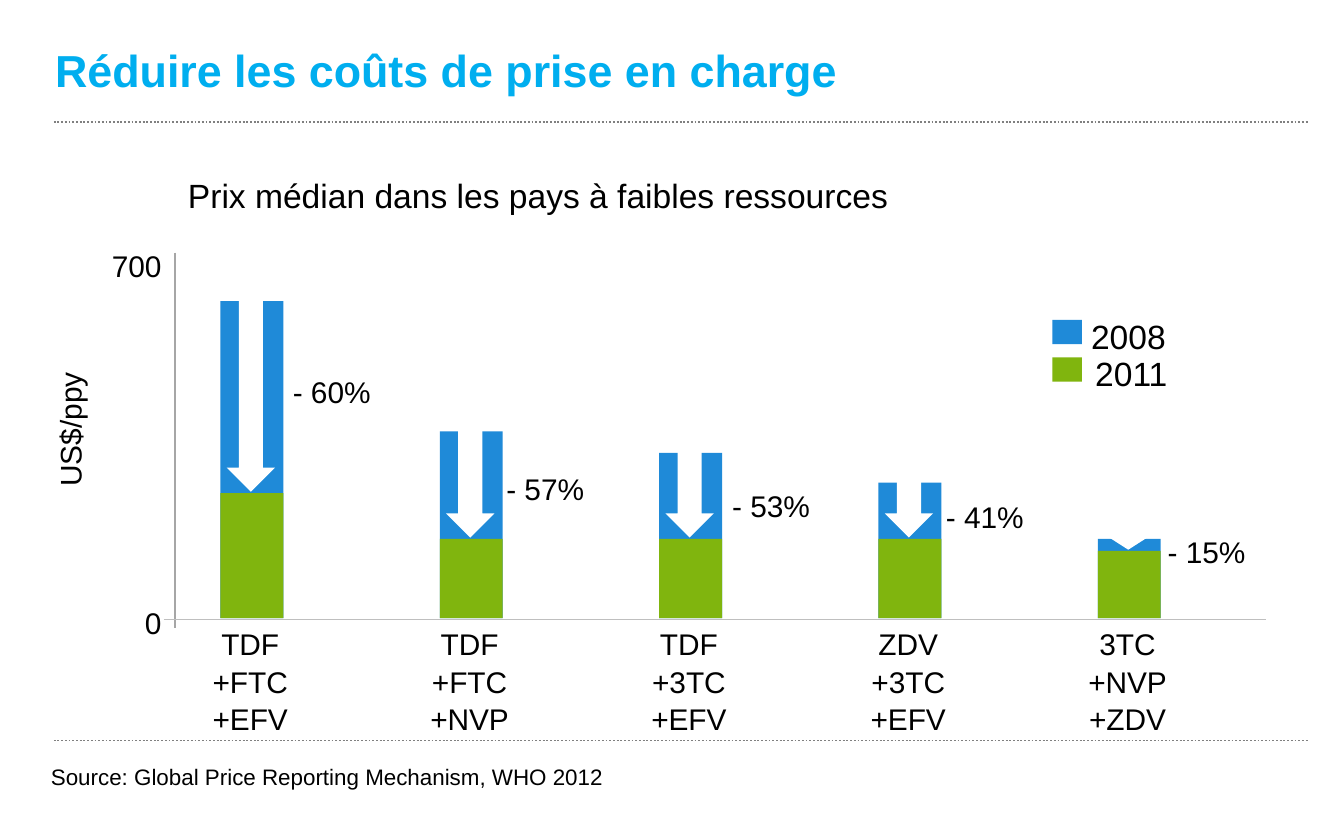
from lxml.etree import SubElement
from pptx import Presentation
from pptx.dml.color import RGBColor
from pptx.enum.dml import MSO_LINE
from pptx.enum.shapes import MSO_CONNECTOR, MSO_SHAPE
from pptx.enum.text import MSO_ANCHOR, PP_ALIGN
from pptx.oxml.ns import qn
from pptx.util import Pt

BLACK = RGBColor(0x00, 0x00, 0x00)
WHITE = RGBColor(0xFF, 0xFF, 0xFF)
CYAN = RGBColor(0x00, 0xAE, 0xEF)
BLUE = RGBColor(0x1F, 0x8A, 0xD8)
GREEN = RGBColor(0x80, 0xB5, 0x0E)
DARK_GREY = RGBColor(0x80, 0x80, 0x80)
MID_GREY = RGBColor(0xA6, 0xA6, 0xA6)
LIGHT_GREY = RGBColor(0xBF, 0xBF, 0xBF)

BASELINE = 331.2
FIRST_BAR = 118.1
BAR_STEP = 117.5
BAR_WIDTH = 33.7
ARROW_WIDTH = 25.9
CATEGORY_WIDTH = 104

# Regimen, 2008 top, 2011 top, arrow top, change, change left, change top
REGIMENS = [
    ("TDF\n+FTC\n+EFV", 161.3, 264.2, 114.5, "- 60%", 149.8, 196.6),
    ("TDF\n+FTC\n+NVP", 231.1, 288.7, 196.6, "- 57%", 264.2, 248.4),
    ("TDF\n+3TC\n+EFV", 242.6, 288.7, 210.2, "- 53%", 385.2, 257.8),
    ("ZDV\n+3TC\n+EFV", 258.5, 288.7, 230.4, "- 41%", 499.7, 263.5),
    ("3TC\n+NVP\n+ZDV", 288.7, 295.2, 247.7, "- 15%", 618.5, 282.2),
]


class SlideBuilder:
    """Hold the text style and the current slide, and draw elements on it."""

    def __init__(self, slide, font_name="Arial", font_size=16):
        self.slide = slide
        self.font_name = font_name
        self.font_size = font_size

    def style(self, paragraph, size, color, bold=False):
        font = paragraph.font
        font.name = self.font_name
        font.size = Pt(size)
        font.bold = bold
        font.color.rgb = color

    def title(self, text, left, top, width, height):
        shape = self.slide.shapes.title
        shape.left, shape.top = Pt(left), Pt(top)
        shape.width, shape.height = Pt(width), Pt(height)
        frame = shape.text_frame
        frame.vertical_anchor = MSO_ANCHOR.MIDDLE
        paragraph = frame.paragraphs[0]
        paragraph.text = text
        paragraph.alignment = PP_ALIGN.LEFT
        self.style(paragraph, 24, CYAN, bold=True)

    def text(self, text, left, top, width, height=26.6, size=None,
             alignment=PP_ALIGN.LEFT, spacing=1.0, rotation=0):
        shape = self.slide.shapes.add_textbox(
            Pt(left), Pt(top), Pt(width), Pt(height))
        shape.rotation = rotation
        shape.text_frame.word_wrap = True
        paragraph = shape.text_frame.paragraphs[0]
        paragraph.text = text
        paragraph.alignment = alignment
        paragraph.line_spacing = spacing
        self.style(paragraph, size or self.font_size, BLACK)

    def shape(self, kind, left, top, width, height, color):
        shape = self.slide.shapes.add_shape(
            kind, Pt(left), Pt(top), Pt(width), Pt(height))
        shape.shadow.inherit = False
        shape.fill.solid()
        shape.fill.fore_color.rgb = color
        shape.line.fill.background()
        return shape

    def bar(self, left, top, color):
        self.shape(MSO_SHAPE.RECTANGLE, left, top, BAR_WIDTH, BASELINE - top, color)

    def line(self, start_x, start_y, end_x, end_y, color, dash=None):
        connector = self.slide.shapes.add_connector(
            MSO_CONNECTOR.STRAIGHT, Pt(start_x), Pt(start_y), Pt(end_x), Pt(end_y))
        connector.line.color.rgb = color
        connector.line.width = Pt(1)
        if dash:
            connector.line.dash_style = dash
        SubElement(connector._element.spPr, qn("a:effectLst"))


def main():
    presentation = Presentation()
    presentation.slide_width, presentation.slide_height = Pt(720), Pt(450)
    builder = SlideBuilder(presentation.slides.add_slide(presentation.slide_layouts[5]))

    builder.title("Réduire les coûts de prise en charge", 22.3, 18.7, 689, 37.4)
    builder.text("Prix médian dans les pays à faibles ressources", 93.6, 90, 420, 28.8, size=18)
    builder.text("Source: Global Price Reporting Mechanism, WHO 2012", 20.2, 405.4, 340, 21.6, size=12)
    for rule_y in (65.5, 396.7):
        builder.line(28.8, rule_y, 700.6, rule_y, DARK_GREY, MSO_LINE.ROUND_DOT)

    builder.text("US$/ppy", -62.6, 216.7, 200.2, alignment=PP_ALIGN.CENTER, rotation=270)
    for value, top in (("700", 128.9), ("0", 320.4)):
        builder.text(value, 49, top, 44.6, alignment=PP_ALIGN.RIGHT)

    for index, regimen in enumerate(REGIMENS):
        name, top_2008, top_2011, arrow_top, change, change_left, change_top = regimen
        left = FIRST_BAR + index * BAR_STEP
        builder.bar(left, top_2008, BLUE)
        builder.bar(left, top_2011, GREEN)
        arrow = builder.shape(MSO_SHAPE.DOWN_ARROW, left + 3.4, arrow_top,
                              ARROW_WIDTH, top_2011 - arrow_top - 0.7, WHITE)
        if index == len(REGIMENS) - 1:
            arrow.adjustments[1] = 0.32
        builder.text(change, change_left, change_top, 64)
        builder.text(name, left + (BAR_WIDTH - CATEGORY_WIDTH) / 2 - 0.9, 330.8,
                     CATEGORY_WIDTH, 65.5, alignment=PP_ALIGN.CENTER, spacing=1.05)

    builder.line(93.6, 135.4, 93.6, 336.2, MID_GREY)
    builder.line(87.8, 331.9, 678.2, 331.9, LIGHT_GREY)

    for year, color, top, text_left in (("2008", BLUE, 171.4, 577.4),
                                        ("2011", GREEN, 191.5, 579.6)):
        builder.shape(MSO_SHAPE.RECTANGLE, 563.8, top, 15.8, 13, color)
        builder.text(year, text_left, top - 5.8, 60, 28.8, size=18)

    presentation.save("out.pptx")


if __name__ == "__main__":
    main()
